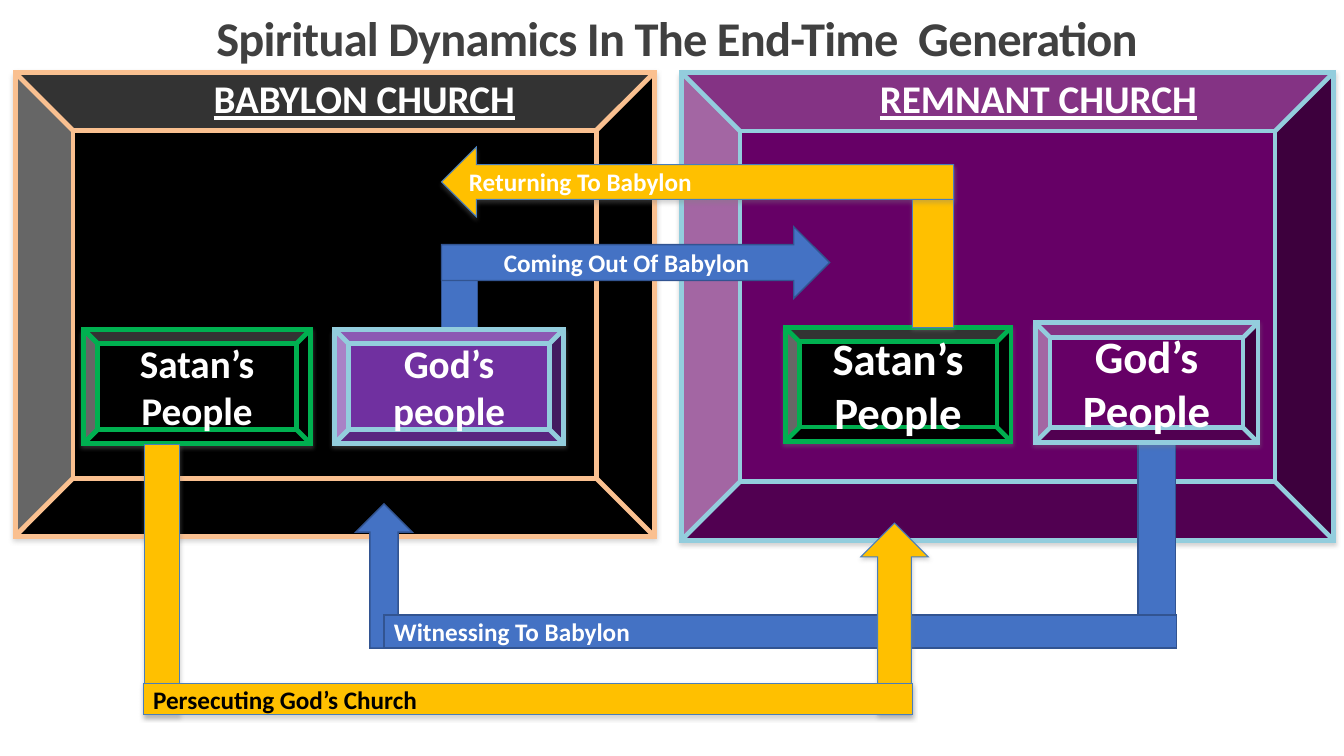
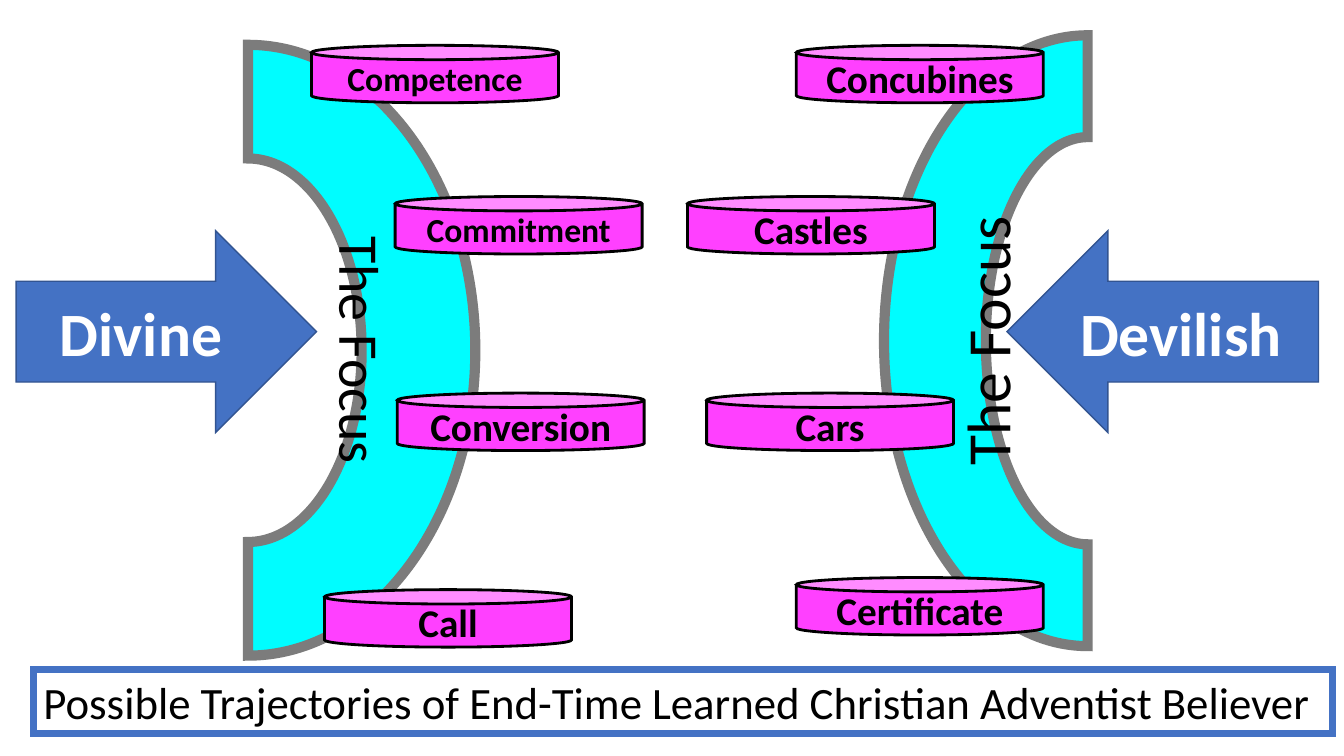
from lxml import etree
from pptx import Presentation
from pptx.dml.color import RGBColor
from pptx.enum.shapes import MSO_SHAPE
from pptx.enum.text import MSO_ANCHOR, MSO_AUTO_SIZE, PP_ALIGN
from pptx.oxml.ns import qn
from pptx.util import Inches, Pt

BEVEL, RECT, CAN, ARC = MSO_SHAPE.BEVEL, MSO_SHAPE.RECTANGLE, MSO_SHAPE.CAN, MSO_SHAPE.BLOCK_ARC
LEFT_ARROW, RIGHT_ARROW, UP_ARROW = MSO_SHAPE.LEFT_ARROW, MSO_SHAPE.RIGHT_ARROW, MSO_SHAPE.UP_ARROW
LEFT, CENTER = PP_ALIGN.LEFT, PP_ALIGN.CENTER
TOP, MIDDLE, BOTTOM = MSO_ANCHOR.TOP, MSO_ANCHOR.MIDDLE, MSO_ANCHOR.BOTTOM
NO_FIT = MSO_AUTO_SIZE.NONE

FONT = "Calibri"
CELL = Inches(0.1)
COLS, ROWS = 133.33, 75
C = {
    "white": "FFFFFF", "black": "000000", "title": "404040",
    "blue": "4472C4", "navy": "325491", "gold": "FFC000", "steel": "4A7EBB",
    "plum": "660066", "violet": "7030A0", "sky": "93CDDD", "peach": "FAC090",
    "green": "00B050", "cyan": "00FDFF", "grey": "7C7C7C", "pink": "FF40FF",
    "shadow": "808080",
}
BLUE_ROUTE = ("blue", "navy", 1, False)
GOLD_ROUTE = ("gold", "steel", 0.75, True)


def rgb(name):
    """Return a palette colour."""
    return RGBColor.from_string(C[name])


def grid(box):
    """Turn columns and rows into lengths."""
    return [round(n * CELL) for n in box]


def write(sp, text, size, colour, bold=True, align=CENTER, anchor=MIDDLE, underline=None):
    """Write one formatted run into a shape and return the run."""
    tf = sp.text_frame
    tf.word_wrap = True
    tf.auto_size = NO_FIT
    tf.vertical_anchor = anchor
    p = tf.paragraphs[0]
    p.alignment = align
    r = p.add_run()
    r.text = text
    f = r.font
    f.name, f.size, f.bold, f.underline = FONT, Pt(size), bold, underline
    f.color.rgb = rgb(colour)
    return r


def paint(sp, fill, line, width):
    """Set a plain fill and a mitred outline."""
    sp.fill.solid()
    sp.fill.fore_color.rgb = rgb(fill)
    sp.line.color.rgb = rgb(line)
    sp.line.width = Pt(width)
    ln = sp.element.spPr.find(qn("a:ln"))
    etree.SubElement(ln, qn("a:miter"), lim="800000")


def draw(shapes, kind, box, fill, line, width, shadow=False):
    """Add a preset shape, with a soft lower shadow if wanted."""
    sp = shapes.add_shape(kind, *grid(box))
    paint(sp, fill, line, width)
    sp.shadow.inherit = False
    if shadow:
        effects = sp.element.spPr.find(qn("a:effectLst"))
        outer = etree.SubElement(effects, qn("a:outerShdw"), blurRad="40000",
                                 dist="23000", dir="5400000", rotWithShape="0")
        clr = etree.SubElement(outer, qn("a:srgbClr"), val=C["shadow"])
        etree.SubElement(clr, qn("a:alpha"), val="35000")
    return sp


def title(s, box, text, size, colour, **style):
    """Move the title placeholder to the box and fill it."""
    sp = s.shapes.title
    sp.left, sp.top, sp.width, sp.height = grid(box)
    return sp, write(sp, text, size, colour, **style)


def church(s, box, heading, fill, line, width):
    """Draw a bevelled church panel with its heading on the upper edge."""
    x, y, w, h = box
    draw(s.shapes, BEVEL, box, fill, line, width, True)
    sp = s.shapes.add_textbox(*grid((x + 18.7, y - 0.3, w * 0.52, 5.7)))
    write(sp, heading, 28, "white", align=LEFT, anchor=TOP, underline=True)
    sp.text_frame.word_wrap = False


def people(s, box, text, size, fill, line, width):
    """Draw a bevelled box that names a group of people."""
    write(draw(s.shapes, BEVEL, box, fill, line, width, True), text, size, "white")


def crossing(s, box, kind, head, stem, text, align, look):
    """Draw a horizontal arrow along the top of the box, with a stem at its tail."""
    x, y, w, h = box
    shapes = s.shapes.add_group_shape().shapes
    stem_x = x if kind == RIGHT_ARROW else x + w - stem
    draw(shapes, RECT, (stem_x, y + head / 4, stem, h - head / 4), *look)
    sp = draw(shapes, kind, (x, y, w, head), *look)
    write(sp, text, 18, "white", align=align)


def return_path(s, box, stem_x, stem, bar, arrow, text, colour, look):
    """Draw a stem down to a bar along the bottom of the box and an arrow back up."""
    x, y, w, h = box
    arrow_x, arrow_w, arrow_h = arrow
    shapes = s.shapes.add_group_shape().shapes
    draw(shapes, UP_ARROW, (x + arrow_x, y + h - arrow_h, arrow_w, arrow_h), *look)
    draw(shapes, RECT, (x + stem_x, y, stem, h), *look)
    sp = draw(shapes, RECT, (x, y + h - bar, w, bar), *look)
    write(sp, text, 18, colour, align=LEFT)


def dynamics_slide(prs):
    """Build the slide of movements between the two churches."""
    s = prs.slides.add_slide(prs.slide_layouts[5])
    sp, r = title(s, (10.7, 0.6, 112.9, 6.3), "Spiritual Dynamics In The End-Time  Generation",
                  34.6, "title", anchor=BOTTOM)
    sp.text_frame.paragraphs[0].line_spacing = 0.65
    r.font.element.set("spc", "-50") if hasattr(r.font, "element") else r._r.get_or_add_rPr().set("spc", "-50")

    church(s, (67.6, 7.2, 64.7, 46.4), "REMNANT CHURCH", "plum", "sky", 3.25)
    church(s, (1.5, 7.2, 63.4, 46), "BABYLON CHURCH", "black", "peach", 3.5)
    return_path(s, (38.1, 44.1, 78.6, 20.2), 74.8, 3.7, 3.3, (-2.8, 5.6, 14.3),
                "Witnessing To Babylon", "white", BLUE_ROUTE)
    crossing(s, (43.8, 22.5, 38.5, 13.9), RIGHT_ARROW, 7.1, 3.6,
             "Coming Out Of Babylon", CENTER, BLUE_ROUTE)
    for box, text, size, fill, line, width in (
        ((77.9, 32.5, 22.4, 11.3), "Satan’s People", 32, "black", "green", 3.25),
        ((102.7, 32, 22.1, 11.9), "God’s People", 32, "plum", "sky", 3.25),
        ((8.3, 32.7, 22.5, 11.3), "Satan’s People", 28, "black", "green", 3.5),
        ((33.2, 32.7, 22.7, 11.3), "God’s people", 28, "violet", "sky", 3.5),
    ):
        people(s, box, text, size, fill, line, width)
    return_path(s, (14.2, 44.1, 76.3, 26.8), 0.1, 3.5, 3.1, (71.2, 6.7, 19),
                "Persecuting God’s Church", "black", GOLD_ROUTE)
    crossing(s, (43.8, 14.6, 50.8, 17.9), LEFT_ARROW, 6.9, 4.1,
             "Returning To Babylon", LEFT, GOLD_ROUTE)


def trajectory(s, box, turn, focus_size, cans, kind, arrow, text):
    """Draw an arc filling the box, the cans along it and the arrow behind it."""
    x, y, w, h = box
    arc_box = (x + (w - h) / 2, y + (h - w) / 2, h, w)
    arc = draw(s.shapes, ARC, arc_box, "cyan", "grey", 7.25)
    arc.rotation = turn
    write(arc, "The Focus", focus_size, "black", bold=False)
    for label, size, dx, dy in cans:
        sp = draw(s.shapes, CAN, (x + dx, y + dy, 24.5, 5.7), "pink", "black", 2)
        write(sp, label, size, "black")
    dx, dy, length = arrow
    sp = draw(s.shapes, kind, (x + dx, y + dy, length, 20), *BLUE_ROUTE)
    write(sp, text, 44, "white")


def trajectories_slide(prs):
    """Build the slide of divine and devilish trajectories."""
    s = prs.slides.add_slide(prs.slide_layouts[5])
    sp, r = title(s, (3.3, 66.4, 128.9, 6.4),
                  "Possible Trajectories of End-Time Learned Christian Adventist Believer",
                  32, "black", bold=False, align=LEFT, anchor=TOP)
    paint(sp, "white", "blue", 5)
    trajectory(s, (2.05, 4.45, 45.1, 60.6), 90, 40,
               (("Competence", 24, 28.85, 0.05), ("Commitment", 24, 37.15, 15.05),
                ("Conversion", 28, 37.35, 34.55), ("Call", 28, 30.15, 54.05)),
               RIGHT_ARROW, (-0.45, 18.45, 29.8), "Divine")
    trajectory(s, (87.7, 3.5, 40.4, 60.6), 270, 44,
               (("Concubines", 28, -8.7, 1), ("Castles", 28, -19.5, 16),
                ("Cars", 28, -17.6, 35.5), ("Certificate", 28, -8.7, 53.8)),
               LEFT_ARROW, (12.2, 19.4, 30.9), "Devilish ")


def main():
    """Build and save the presentation."""
    prs = Presentation()
    prs.slide_width, prs.slide_height = grid((COLS, ROWS))
    dynamics_slide(prs)
    trajectories_slide(prs)
    prs.save("out.pptx")


if __name__ == "__main__":
    main()
